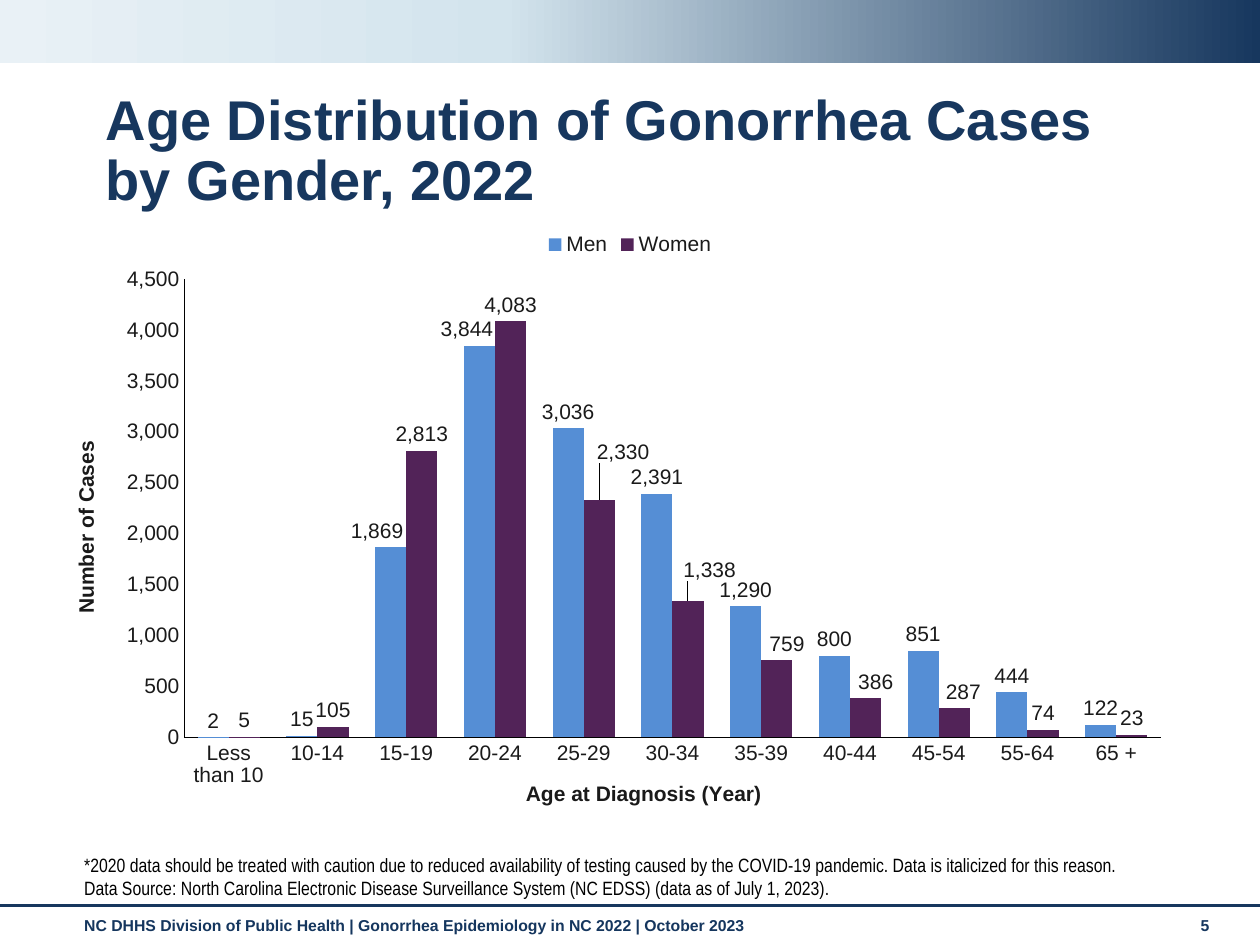
from copy import deepcopy

from lxml.etree import SubElement
from pptx import Presentation
from pptx.chart.data import CategoryChartData
from pptx.dml.color import RGBColor
from pptx.enum.chart import XL_CHART_TYPE as ChartType, XL_LABEL_POSITION as LabelPos
from pptx.enum.chart import XL_LEGEND_POSITION as LegendPos, XL_TICK_MARK as Tick
from pptx.enum.shapes import MSO_CONNECTOR as Connector, MSO_SHAPE as Shape
from pptx.enum.text import MSO_ANCHOR as Anchor
from pptx.oxml.ns import qn
from pptx.util import Inches, Pt

COLS, ROWS = 100, 75
NAVY, INK, BLACK = "17375E", "1A1A1A", "000000"
NUMBER = "#,##0"
AGES = ["Less than 10", "10-14", "15-19", "20-24", "25-29", "30-34",
        "35-39", "40-44", "45-54", "55-64", "65 +"]
CASES = {
    "Men": ("558ED5", [2, 15, 1869, 3844, 3036, 2391, 1290, 800, 851, 444, 122]),
    "Women": ("522358", [5, 105, 2813, 4083, 2330, 1338, 759, 386, 287, 74, 23]),
}
LABEL_SHIFTS = {
    "Men": {2: (-0.012, 0), 3: (-0.011, 0)},
    "Women": {4: (0.021, -0.054), 5: (0.019, -0.025),
              6: (0.009, 0), 7: (0.009, 0), 8: (0.008, 0)},
}


def rgb(color):
    return RGBColor.from_string(color)


def manual_layout(**values):
    parent = SubElement(SubElement(deepcopy(EMPTY), qn("c:layout")), qn("c:manualLayout"))
    for name, value in values.items():
        SubElement(parent, qn(f"c:{name}")).set("val", str(value))
    return parent.getparent()


class Deck:
    font = "Arial"

    def __init__(self, prs):
        self.prs = prs
        self.s = prs.slides.add_slide(prs.slide_layouts[6])

    def box(self, x, y, w, h):
        cw, rh = self.prs.slide_width / COLS, self.prs.slide_height / ROWS
        return [round(v) for v in (x * cw, y * rh, w * cw, h * rh)]

    def style(self, font, size, color, bold=False, name=None):
        font.name, font.size, font.bold = name or self.font, Pt(size), bold
        font.color.rgb = rgb(color)

    def text(self, area, lines, size, color, bold=False, name=None,
             anchor=Anchor.TOP, spacing=1.0):
        tf = self.s.shapes.add_textbox(*self.box(*area)).text_frame
        tf.word_wrap, tf.vertical_anchor = True, anchor
        tf.text = "\n".join(lines)
        for p in tf.paragraphs:
            p.line_spacing = spacing
            self.style(p.font, size, color, bold, name)

    def gradient(self, area, stops, angle):
        sp = self.s.shapes.add_shape(Shape.RECTANGLE, *self.box(*area))
        sp.shadow.inherit = False
        sp.line.fill.background()
        sp.fill.gradient()
        sp.fill.gradient_angle = angle
        first = next(sp._element.iter(qn("a:gs")))
        first.addnext(deepcopy(first))
        for stop, (position, color) in zip(sp.fill.gradient_stops, stops):
            stop.position, stop.color.rgb = position, rgb(color)

    def rule(self, y, color, width):
        x1, y1, x2, _ = self.box(0, y, COLS, 0)
        line = self.s.shapes.add_connector(Connector.STRAIGHT, x1, y1, x2, y1)
        line.line.color.rgb, line.line.width = rgb(color), Pt(width)
        SubElement(line._element.spPr, qn("a:effectLst"))

    def axis(self, axis, title):
        axis.has_major_gridlines = False
        axis.major_tick_mark = axis.minor_tick_mark = Tick.NONE
        axis.format.line.color.rgb, axis.format.line.width = rgb(BLACK), Pt(0.75)
        tf = axis.axis_title.text_frame
        tf.text = title
        self.style(tf.paragraphs[0].font, 12, INK, True)

    def columns(self, area, cats, series, shifts, titles, plot_area):
        data = CategoryChartData(number_format=NUMBER)
        data.categories = cats
        for name, (_, values) in series.items():
            data.add_series(name, values)
        chart = self.s.shapes.add_chart(
            ChartType.COLUMN_CLUSTERED, *self.box(*area), data).chart
        self.style(chart.font, 12, INK)
        chart.has_title = False
        chart.has_legend = True
        chart.legend.position = LegendPos.TOP
        chart.legend.include_in_layout = False
        for axis, title in zip((chart.category_axis, chart.value_axis), titles):
            self.axis(axis, title)
        value = chart.value_axis
        value.minimum_scale, value.maximum_scale, value.major_unit = 0, 4500, 500
        value.tick_labels.number_format = NUMBER
        value.tick_labels.number_format_is_linked = False

        plot = chart.plots[0]
        plot.gap_width, plot.overlap, plot.vary_by_categories = 85, 0, False
        for ser in plot.series:
            ser.format.fill.solid()
            ser.format.fill.fore_color.rgb = rgb(series[ser.name][0])
            labels = ser.data_labels
            labels.show_value, labels.position = True, LabelPos.OUTSIDE_END
            labels.number_format, labels.number_format_is_linked = NUMBER, False
            for i, (dx, dy) in shifts[ser.name].items():
                ser.points[i].data_label.position = LabelPos.OUTSIDE_END
            for label in ser._element.iter(qn("c:dLbl")):
                idx = label.find(qn("c:idx"))
                dx, dy = shifts[ser.name][int(idx.get("val"))]
                idx.addnext(manual_layout(x=dx, y=dy))

        area_xml = next(chart._chartSpace.iter(qn("c:plotArea")))
        for old in area_xml.findall(qn("c:layout")):
            area_xml.remove(old)
        x, y, w, h = plot_area
        area_xml.insert(0, manual_layout(layoutTarget="inner", xMode="edge",
                                         yMode="edge", x=x, y=y, w=w, h=h))


prs = Presentation()
prs.slide_width, prs.slide_height = Inches(10), Inches(7.5)
EMPTY = SubElement(deepcopy(prs.slide_layouts[6]._element), qn("c:plotArea"))
deck = Deck(prs)
deck.gradient((0, 0, COLS, 5), [(0, NAVY), (0.6, "D3E4ED"), (1, "E9F1F6")], 180)
deck.rule(71.9, NAVY, 1.75)
deck.text((5.7, 72.2, 87.4, 2.9),
          ["NC DHHS Division of Public Health | Gonorrhea Epidemiology in NC 2022 | October 2023"],
          9, "15365E", True)
deck.text((94.3, 72.2, 4.4, 3), ["5"], 9, "15365E", True)
deck.text((7.4, 6.8, 85.8, 6), ["Age Distribution of Gonorrhea Cases by Gender, 2022"],
          32, NAVY, True, spacing=0.9)
deck.columns((5, 17.4, 90, 47), AGES, CASES, LABEL_SHIFTS,
             ("Age at Diagnosis (Year)", "Number of Cases"), (0.107, 0.101, 0.861, 0.774))
deck.text((5.7, 68.3, 87.4, 3.6),
          ["*2020 data should be treated with caution due to reduced availability of testing "
           "caused by the COVID-19 pandemic. Data is italicized for this reason.",
           "Data Source: North Carolina Electronic Disease Surveillance System (NC EDSS) "
           "(data as of July 1, 2023)."],
          11, BLACK, name="Arial Narrow", anchor=Anchor.BOTTOM)
prs.save("out.pptx")
